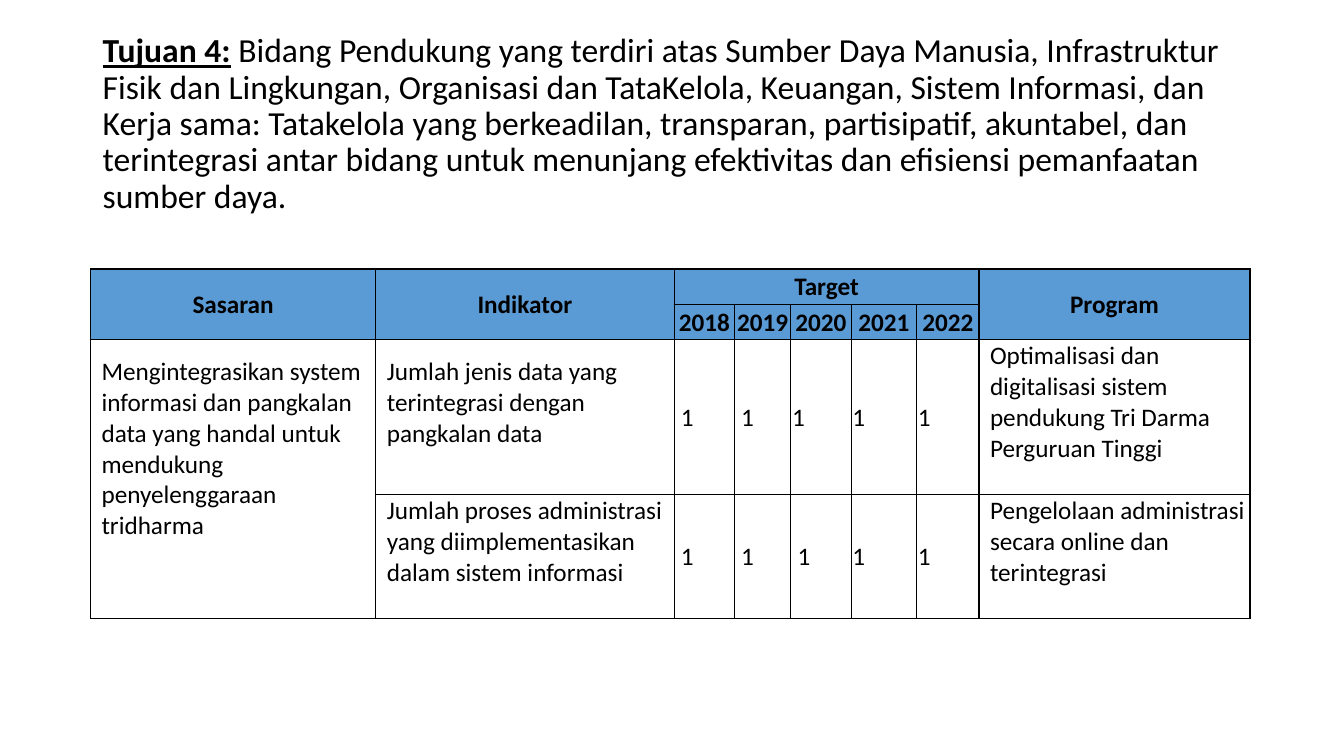
import pptx
import pptx.util
import pptx.dml.color
import pptx.enum.text
import pptx.oxml
import pptx.oxml.ns
from pptx.util import Cm

COLORS = {"text": "000000", "border": "000000", "header": "5B9BD5"}
ALIGN = pptx.enum.text.PP_ALIGN
ANCHOR = pptx.enum.text.MSO_ANCHOR

TITLE = (" Bidang Pendukung yang terdiri atas Sumber Daya Manusia, Infrastruktur Fisik dan "
         "Lingkungan, Organisasi dan TataKelola, Keuangan, Sistem Informasi, dan Kerja sama: "
         "Tatakelola yang berkeadilan, transparan, partisipatif, akuntabel, dan terintegrasi "
         "antar bidang untuk menunjang efektivitas dan efisiensi pemanfaatan sumber daya.")
COL_WIDTHS = [7.19, 7.52, 1.52, 1.42, 1.52, 1.65, 1.57, 6.83]
ROW_HEIGHTS = [0.89, 0.89, 3.9, 3.12]
MERGES = [(0, 0, 1, 0), (0, 1, 1, 1), (0, 2, 0, 6), (0, 7, 1, 7), (2, 0, 3, 0)]
HEADERS = {(0, 0): "Sasaran", (0, 1): "Indikator", (0, 2): "Target", (0, 7): "Program"}
YEARS = range(2018, 2023)
DESCRIPTIONS = [
    (2, 0, "Mengintegrasikan system informasi dan pangkalan data yang handal untuk "
           "mendukung penyelenggaraan tridharma", 0.43),
    (2, 1, "Jumlah jenis data yang terintegrasi dengan pangkalan data", 0.43),
    (2, 7, "Optimalisasi dan digitalisasi sistem pendukung Tri Darma Perguruan Tinggi", 0.03),
    (3, 1, "Jumlah proses administrasi yang diimplementasikan dalam sistem informasi", 0.03),
    (3, 7, "Pengelolaan administrasi secara online dan terintegrasi", 0.03),
]
TARGET_INDENTS = {2: [0.14, 0.14, 0, 0, 0], 3: [0.14, 0.14, 0.14, 0, 0]}


def add_text(p, text, size=18, bold=False, underline=False, align=ALIGN.LEFT):
    """Add a formatted run to a paragraph."""
    p.alignment = align
    r = p.add_run()
    r.text = text
    f = r.font
    f.name, f.size, f.bold, f.underline = "Calibri", pptx.util.Pt(size), bold, underline
    f.color.rgb = pptx.dml.color.RGBColor.from_string(COLORS["text"])


def add_title(s):
    """Add the goal statement above the table."""
    tf = s.shapes.add_textbox(Cm(2.34), Cm(0.6), Cm(29.21), Cm(5.08)).text_frame
    tf.word_wrap = True
    tf.vertical_anchor = ANCHOR.MIDDLE
    p = tf.paragraphs[0]
    p.line_spacing = 0.9
    add_text(p, "Tujuan 4:", size=24, bold=True, underline=True)
    add_text(p, TITLE, size=24)


def set_borders(cell):
    """Draw a thin line on all four sides of a cell."""
    tc_pr = cell._tc.get_or_add_tcPr()
    for i, side in enumerate(("lnL", "lnR", "lnT", "lnB")):
        tc_pr.insert(i, pptx.oxml.parse_xml(
            f'<a:{side} {pptx.oxml.ns.nsdecls("a")} w="12700"><a:solidFill>'
            f'<a:srgbClr val="{COLORS["border"]}"/></a:solidFill></a:{side}>'))


def style_cell(cell, header):
    """Set the fill, margins and borders of a cell."""
    if header:
        cell.fill.solid()
        cell.fill.fore_color.rgb = pptx.dml.color.RGBColor.from_string(COLORS["header"])
    else:
        cell.fill.background()
    cell.margin_left = cell.margin_right = cell.margin_top = Cm(0.03)
    cell.margin_bottom = 0
    cell.vertical_anchor = ANCHOR.MIDDLE
    set_borders(cell)


def add_target_table(s):
    """Add the empty table grid with its merged cells."""
    shape = s.shapes.add_table(len(ROW_HEIGHTS), len(COL_WIDTHS), Cm(2.28), Cm(6.78),
                               Cm(sum(COL_WIDTHS)), Cm(sum(ROW_HEIGHTS)))
    table = shape.table
    table.first_row = table.horz_banding = False
    for col, width in zip(table.columns, COL_WIDTHS):
        col.width = Cm(width)
    for i, (row, height) in enumerate(zip(table.rows, ROW_HEIGHTS)):
        row.height = Cm(height)
        for cell in row.cells:
            style_cell(cell, header=i < 2)
    for top, left, bottom, right in MERGES:
        table.cell(top, left).merge(table.cell(bottom, right))
    return table


def fill_table(table):
    """Write headings, descriptions and yearly targets."""
    years = {(1, 2 + i): str(year) for i, year in enumerate(YEARS)}
    for (row, col), text in {**HEADERS, **years}.items():
        p = table.cell(row, col).text_frame.paragraphs[0]
        add_text(p, text, bold=True, align=ALIGN.CENTER)
    for row, col, text, top in DESCRIPTIONS:
        cell = table.cell(row, col)
        cell.vertical_anchor = ANCHOR.TOP
        cell.margin_left, cell.margin_top = Cm(0.28), Cm(top)
        add_text(cell.text_frame.paragraphs[0], text)
    for row, indents in TARGET_INDENTS.items():
        for col, indent in enumerate(indents, 2):
            cell = table.cell(row, col)
            cell.margin_left = Cm(0.03 + indent)
            add_text(cell.text_frame.paragraphs[0], "1")


def main():
    """Build the slide and save it."""
    prs = pptx.Presentation()
    prs.slide_width, prs.slide_height = Cm(33.87), Cm(19.05)
    s = prs.slides.add_slide(prs.slide_layouts[6])
    fill_table(add_target_table(s))
    add_title(s)
    prs.save("out.pptx")


if __name__ == "__main__":
    main()
